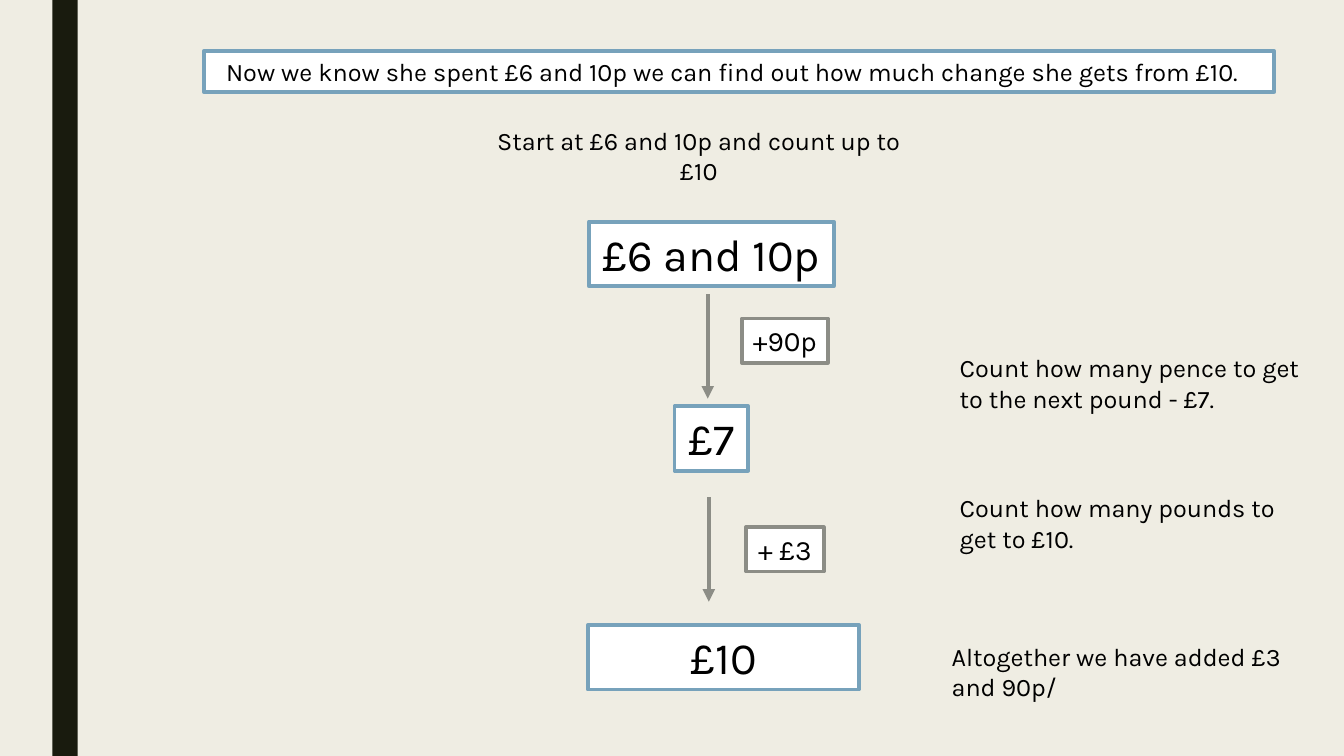
"""Build a slide that counts up from £6 and 10p to £10 to find the change."""
from lxml import etree
from pptx import Presentation
from pptx import util as u
from pptx.dml.color import RGBColor
from pptx.enum import shapes, text
from pptx.oxml.ns import qn

BLUE, GREY, WHITE = "77A2BB", "8C8D86", "FFFFFF"

prs = Presentation()
prs.slide_width, prs.slide_height = u.Inches(13.33), u.Inches(7.5)
COL, ROW = prs.slide_width / 100, prs.slide_height / 100
s = prs.slides.add_slide(prs.slide_layouts[6])


def paint(fmt, color):
    fmt.solid()
    fmt.fore_color.rgb = RGBColor.from_string(color)


def add_text(words, x, y, w, h, size=18, line=None, center=True, wrap=True, right=0.1):
    at = int(x * COL), int(y * ROW), int(w * COL), int(h * ROW)
    if line:
        sp = s.shapes.add_shape(shapes.MSO_SHAPE.RECTANGLE, *at)
        sp.shadow.inherit = False
        paint(sp.fill, WHITE)
        paint(sp.line.fill, line)
        sp.line.width = u.Pt(2.75)
    else:
        sp = s.shapes.add_textbox(*at)
    tf = sp.text_frame
    tf.word_wrap = wrap
    tf.vertical_anchor = text.MSO_ANCHOR.TOP
    tf.margin_right = u.Inches(right)
    p = tf.paragraphs[0]
    p.alignment = text.PP_ALIGN.CENTER if center else text.PP_ALIGN.LEFT
    r = p.add_run()
    r.text = words
    r.font.name, r.font.size = "Karla", u.Pt(size)
    paint(r.font.fill, "000000")


paint(s.background.fill, "EFEDE3")
bar = s.shapes.add_shape(shapes.MSO_SHAPE.RECTANGLE, int(3.9 * COL), 0,
                         int(1.88 * COL), prs.slide_height)
bar.shadow.inherit = False
paint(bar.fill, "191B0E")
bar.line.fill.background()

add_text("Now we know she spent £6 and 10p we can find out how much change she gets from £10.",
         15.15, 6.8, 79.67, 5.33, line=BLUE, right=0.23)
add_text("Start at £6 and 10p and count up to £10", 34.96, 15.87, 34.06, 5.33)

for amount, x, y, w in [("£6 and 10p", 43.81, 29.33, 18.23),
                        ("£7", 50.19, 53.73, 5.48),
                        ("£10", 43.74, 82.67, 20.18)]:
    add_text(amount, x, y, w, 8.53, size=32, line=BLUE, wrap=False)

for step, x, y, w in [("+90p", 55.21, 42.13, 6.38), ("+ £3", 55.51, 69.73, 5.78)]:
    add_text(step, x, y, w, 5.87, size=20, line=GREY, wrap=False)

for x, top in [(52.66, 38.93), (52.74, 65.8)]:
    arrow = s.shapes.add_connector(shapes.MSO_CONNECTOR.STRAIGHT, int(x * COL),
                                   int(top * ROW), int(x * COL), int((top + 13.8) * ROW))
    paint(arrow.line.fill, GREY)
    arrow.line.width = u.Pt(3)
    etree.SubElement(arrow.line._get_or_add_ln(), qn("a:tailEnd"), type="triangle")
    etree.SubElement(arrow._element.spPr, qn("a:effectLst"))

for note, x, y in [("Count how many pence to get to the next pound - £7.", 70.67, 46),
                   ("Count how many pounds to get to £10.", 70.67, 64.53),
                   ("Altogether we have added £3 and 90p/", 70.07, 84.13)]:
    add_text(note, x, y, 98.28 - x, 9.47, center=False)

prs.save("out.pptx")
